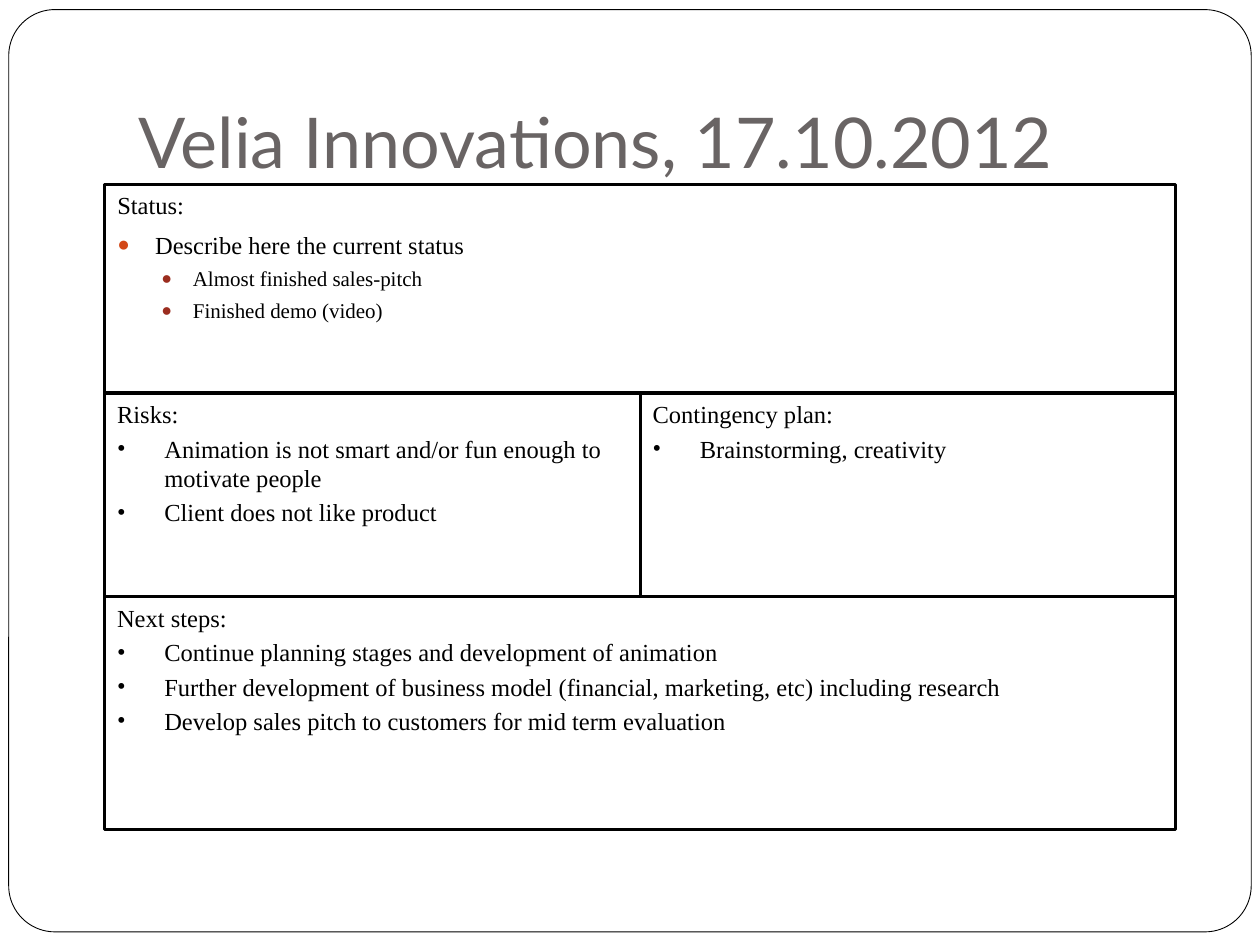
from lxml import etree
from pptx import Presentation
from pptx.dml.color import RGBColor
from pptx.enum import shapes, text
from pptx.oxml import ns
from pptx.util import Pt

TITLE = "Velia Innovations, 17.10.2012"
STATUS = [
    ("head", "Status:"),
    ("main", "Describe here the current status"),
    ("sub", "Almost finished sales-pitch"),
    ("sub", "Finished demo (video)"),
]
RISKS = [
    ("label", "Risks:"),
    ("item", "Animation is not smart and/or fun enough to motivate people"),
    ("item", "Client does not like product"),
]
PLAN = [
    ("label", "Contingency plan:"),
    ("item", "Brainstorming, creativity"),
]
STEPS = [
    ("label", "Next steps:"),
    ("item", "Continue planning stages and development of animation"),
    ("item", "Further development of business model (financial, marketing, etc) including research"),
    ("item", "Develop sales pitch to customers for mid term evaluation"),
]
# level, size, space before, left margin, hang, bullet, bullet colour, bullet size
STYLES = {
    "head": (0, 14, 5.8, 21.6, 21.6, None, None, None),
    "main": (0, 14, 5.8, 21.6, 21.6, "●", "D34817", 85),
    "sub": (1, 12, 3.7, 43.2, 18, "●", "9B2D1F", 85),
    "label": (0, 14, 2.8, 27, 27, None, None, None),
    "item": (0, 14, 2.8, 27, 27, "•", "000000", 100),
}
LEFT, TOP, WIDE = 59.8, 105.2, 612
ROWS = [(119.4, [STATUS]), (116.4, [RISKS, PLAN]), (133, [STEPS])]


def color(code):
    return RGBColor.from_string(code)


def place(shape, x, y, w, h):
    shape.left, shape.top, shape.width, shape.height = map(Pt, (x, y, w, h))


def outline(shape, width):
    shape.line.color.rgb = color("000000")
    shape.line.width = Pt(width)


def add_run(para, words, font, size, code):
    run = para.add_run()
    run.text = words
    run.font.name = font
    run.font.size = Pt(size)
    run.font.color.rgb = color(code)


def bullet(para, left, hang, mark, code, size):
    props = para._p.get_or_add_pPr()
    props.set("marL", str(Pt(left)))
    props.set("indent", str(-Pt(hang)))
    if mark is None:
        etree.SubElement(props, ns.qn("a:buNone"))
        return
    tint = etree.SubElement(props, ns.qn("a:buClr"))
    etree.SubElement(tint, ns.qn("a:srgbClr"), val=code)
    etree.SubElement(props, ns.qn("a:buSzPct"), val=str(size * 1000))
    etree.SubElement(props, ns.qn("a:buFont"), typeface="Times New Roman")
    etree.SubElement(props, ns.qn("a:buChar"), char=mark)


def write(shape, lines):
    frame = shape.text_frame
    frame.word_wrap = True
    frame.auto_size = text.MSO_AUTO_SIZE.NONE
    frame.vertical_anchor = text.MSO_ANCHOR.TOP
    for num, (kind, words) in enumerate(lines):
        level, size, gap, *marks = STYLES[kind]
        para = frame.add_paragraph() if num else frame.paragraphs[0]
        para.level = level
        para.alignment = text.PP_ALIGN.LEFT
        para.space_before = Pt(gap)
        add_run(para, words, "Times New Roman", size, "000000")
        bullet(para, *marks)


deck = Presentation()
deck.slide_width, deck.slide_height = Pt(720), Pt(540)
slide = deck.slides.add_slide(deck.slide_layouts[1])
title, body = slide.placeholders

panel = slide.shapes.add_shape(
    shapes.MSO_SHAPE.ROUNDED_RECTANGLE, Pt(5), Pt(5.5), Pt(710), Pt(527))
panel.adjustments[0] = 0.05
panel.shadow.inherit = False
panel.fill.solid()
panel.fill.fore_color.rgb = color("FFFFFF")
outline(panel, 0.5)
slide.shapes._spTree.insert(2, panel._element)

place(title, 72, 21.6, 612, 90)
frame = title.text_frame
frame.word_wrap = True
frame.auto_size = text.MSO_AUTO_SIZE.NONE
frame.vertical_anchor = text.MSO_ANCHOR.BOTTOM
frame.margin_bottom = Pt(7.2)
frame.paragraphs[0].alignment = text.PP_ALIGN.LEFT
add_run(frame.paragraphs[0], TITLE, "Lato", 40, "696464")

top = TOP
for high, cells in ROWS:
    wide = WIDE / len(cells)
    for col, lines in enumerate(cells):
        if lines is STATUS:
            box = body
        else:
            box = slide.shapes.add_shape(shapes.MSO_SHAPE.RECTANGLE, 0, 0, 0, 0)
            box.shadow.inherit = False
        place(box, LEFT + col * wide, top, wide, high)
        box.fill.background()
        outline(box, 1.75)
        write(box, lines)
    top += high

deck.save("out.pptx")
